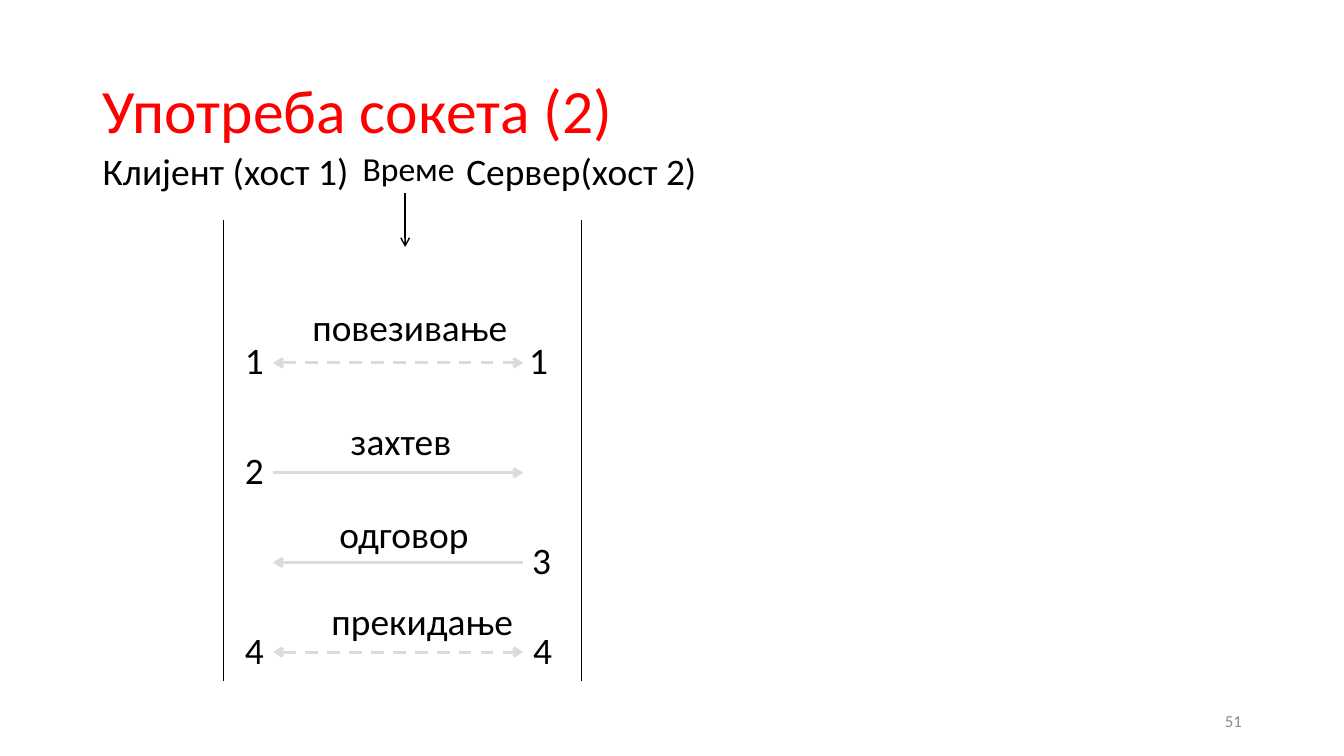
from dataclasses import dataclass
from typing import Optional

from lxml.etree import SubElement
from pptx import Presentation
from pptx.dml.color import RGBColor
from pptx.enum.dml import MSO_LINE_DASH_STYLE as Dash
from pptx.enum.shapes import MSO_CONNECTOR as Connector
from pptx.enum.text import MSO_ANCHOR as Anchor, MSO_AUTO_SIZE as AutoSize, PP_ALIGN as Align
from pptx.oxml.ns import qn
from pptx.shapes.autoshape import Shape
from pptx.slide import Slide
from pptx.text.text import TextFrame
from pptx.util import Pt

BLACK = RGBColor(0x00, 0x00, 0x00)
RED = RGBColor(0xFF, 0x00, 0x00)
GRAY = RGBColor(0x8C, 0x8C, 0x8C)
LIGHT_GRAY = RGBColor(0xDB, 0xDB, 0xDB)
FONT = "Calibri"
TEXT_SIZE = 26.7
TEXT_HEIGHT = 39.6
HEADING_TOP = 102.2
CLIENT_X, SERVER_X = 159.8, 415.4
LIFELINE_TOP, LIFELINE_BOTTOM = 157, 486.7
ARROW_LEFT, ARROW_RIGHT = 195.1, 373.7
CLIENT_STEP_LEFT = 167.8
STEP_WIDTH = 28.1
STEP_RISE = 21.6


@dataclass
class Label:
    text: str
    left: float
    top: float
    width: float
    height: float = TEXT_HEIGHT
    size: float = TEXT_SIZE
    color: RGBColor = BLACK
    align: Align = Align.LEFT
    anchor: Anchor = Anchor.TOP
    wrap: bool = False


@dataclass
class Line:
    x1: float
    y1: float
    x2: float
    y2: float
    color: RGBColor = BLACK
    width: float = 1
    dashed: bool = False
    head: bool = False
    tail: bool = False


@dataclass
class Message:
    name: Label
    y: float
    client_step: Optional[str] = None
    server_step: Optional[str] = None
    server_step_left: float = 370.8


HEADINGS = [
    Label("Клијент (хост 1)", 65.5, HEADING_TOP, 191.5, align=Align.CENTER),
    Label("Сервер(хост 2)", 325.4, HEADING_TOP, 180, align=Align.CENTER),
    Label("Време", 252, HEADING_TOP, 80.6, height=36, size=24),
]
MESSAGES = [
    Message(Label("повезивање", 216, 213.8, 154.8), 259.2, "1", "1"),
    Message(Label("захтев", 243.4, 295.2, 87.1), 337.7, client_step="2"),
    Message(Label("одговор", 235.4, 361.4, 108), 401.8, server_step="3", server_step_left=373),
    Message(Label("прекидање", 229.7, 423.4, 144.7), 465.8, "4", "4", 373.7),
]
SLIDE_NUMBER = Label("51", 678.2, 500.4, 216, 28.8, 12, GRAY, Align.RIGHT, Anchor.MIDDLE, True)


def format_text(text_frame: TextFrame, size: float, color: RGBColor, align: Align) -> None:
    for paragraph in text_frame.paragraphs:
        paragraph.alignment = align
        for run in paragraph.runs:
            run.font.name = FONT
            run.font.size = Pt(size)
            run.font.color.rgb = color


def place(shape: Shape, left: float, top: float, width: float, height: float) -> None:
    shape.left, shape.top = Pt(left), Pt(top)
    shape.width, shape.height = Pt(width), Pt(height)


def add_title(slide: Slide, text: str) -> None:
    title = slide.shapes.title
    place(title, 66, 28.8, 828, 104.4)
    text_frame = title.text_frame
    text_frame.text = text
    text_frame.auto_size = AutoSize.NONE
    text_frame.vertical_anchor = Anchor.MIDDLE
    text_frame.paragraphs[0].line_spacing = 0.9
    format_text(text_frame, 44, RED, Align.LEFT)


def add_label(slide: Slide, label: Label) -> None:
    box = slide.shapes.add_textbox(Pt(label.left), Pt(label.top), Pt(label.width), Pt(label.height))
    text_frame = box.text_frame
    text_frame.text = label.text
    text_frame.word_wrap = label.wrap
    text_frame.auto_size = AutoSize.NONE if label.wrap else AutoSize.SHAPE_TO_FIT_TEXT
    text_frame.vertical_anchor = label.anchor
    format_text(text_frame, label.size, label.color, label.align)


def add_line(slide: Slide, line: Line) -> None:
    connector = slide.shapes.add_connector(
        Connector.STRAIGHT, Pt(line.x1), Pt(line.y1), Pt(line.x2), Pt(line.y2))
    connector.line.color.rgb = line.color
    connector.line.width = Pt(line.width)
    if line.dashed:
        connector.line.dash_style = Dash.DASH
    outline = connector.line._get_or_add_ln()
    for tag, shown in (("a:headEnd", line.head), ("a:tailEnd", line.tail)):
        if shown:
            SubElement(outline, qn(tag), type="arrow")
    SubElement(connector._element.spPr, qn("a:effectLst"))


def add_message(slide: Slide, message: Message) -> None:
    both_ways = bool(message.client_step and message.server_step)
    start, end = ARROW_LEFT, ARROW_RIGHT
    if not message.client_step:
        start, end = end, start
    add_line(slide, Line(start, message.y, end, message.y, LIGHT_GRAY, 2.25,
                         dashed=both_ways, head=both_ways, tail=True))
    add_label(slide, message.name)
    for step, left in ((message.client_step, CLIENT_STEP_LEFT),
                       (message.server_step, message.server_step_left)):
        if step:
            add_label(slide, Label(step, left, message.y - STEP_RISE, STEP_WIDTH))


def main() -> None:
    presentation = Presentation()
    presentation.slide_width, presentation.slide_height = Pt(960), Pt(540)
    slide = presentation.slides.add_slide(presentation.slide_layouts[5])
    add_title(slide, "Употреба сокета (2)")
    add_label(slide, SLIDE_NUMBER)
    for x in (CLIENT_X, SERVER_X):
        add_line(slide, Line(x, LIFELINE_TOP, x, LIFELINE_BOTTOM))
    for heading in HEADINGS:
        add_label(slide, heading)
    add_line(slide, Line(289.4, 138.2, 289.4, 176.4, tail=True))
    for message in MESSAGES:
        add_message(slide, message)
    presentation.save("out.pptx")


if __name__ == "__main__":
    main()
